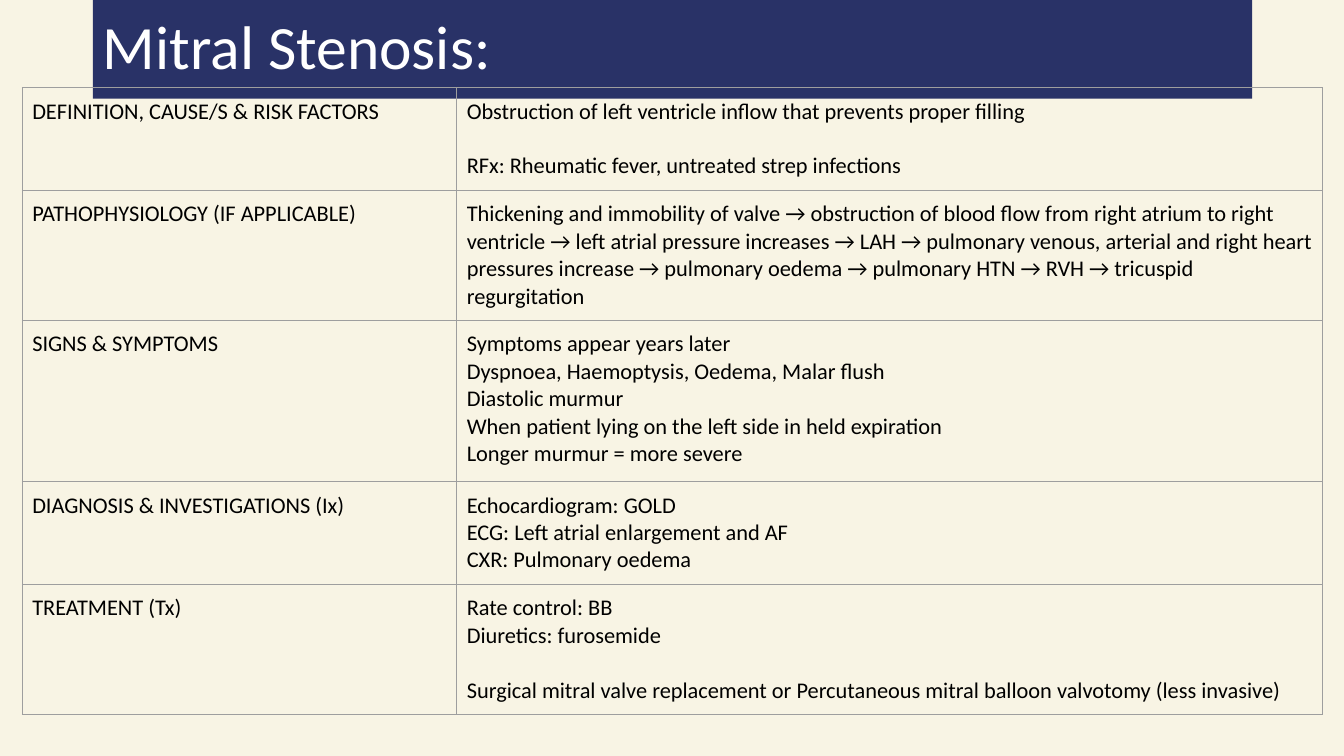
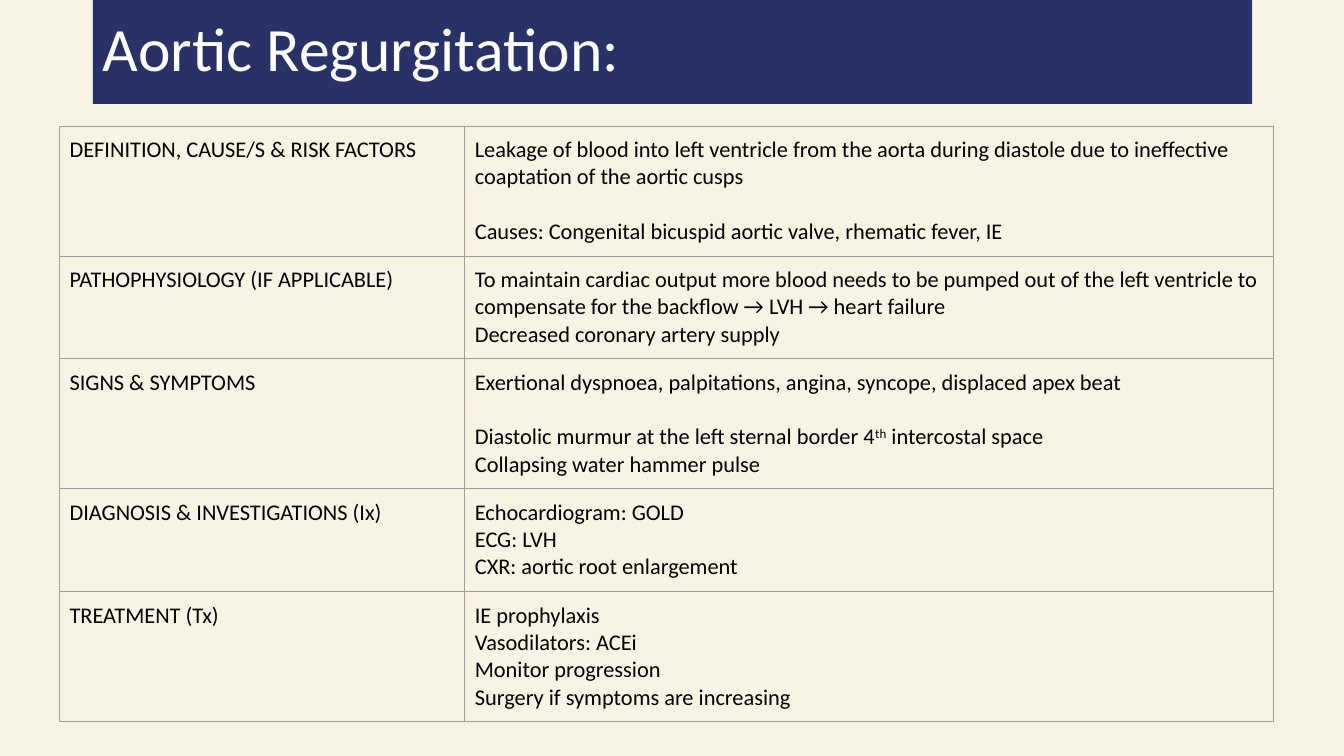
from lxml.etree import SubElement
from pptx import Presentation
from pptx.dml.color import RGBColor
from pptx.enum.text import MSO_ANCHOR, MSO_AUTO_SIZE, PP_ALIGN
from pptx.oxml.ns import qn
from pptx.util import Inches, Pt

CREAM = RGBColor(0xF8, 0xF4, 0xE4)
NAVY = RGBColor(0x29, 0x32, 0x67)
WHITE = RGBColor(0xFF, 0xFF, 0xFF)
BLACK = RGBColor(0, 0, 0)
GREY = RGBColor(0x9E, 0x9E, 0x9E)
FONT = "Calibri"
GAP = Pt(19.5)
PAD = Inches(0.1)
LABELS = [
    "DEFINITION, CAUSE/S & RISK FACTORS",
    "PATHOPHYSIOLOGY (IF APPLICABLE)",
    "SIGNS & SYMPTOMS",
    "DIAGNOSIS & INVESTIGATIONS (Ix)",
    "TREATMENT (Tx)",
]

# Each entry holds blocks of lines; a gap separates the blocks, and ^ encloses superscript.
MITRAL = [
    [["Obstruction of left ventricle inflow that prevents proper filling"],
     ["RFx: Rheumatic fever, untreated strep infections"]],
    [["Thickening and immobility of valve → obstruction of blood flow from right "
      "atrium to right ventricle → left atrial pressure increases → LAH → pulmonary "
      "venous, arterial and right heart pressures increase → pulmonary oedema → "
      "pulmonary HTN → RVH → tricuspid regurgitation"]],
    [["Symptoms appear years later",
      "Dyspnoea, Haemoptysis, Oedema, Malar flush",
      "Diastolic murmur",
      "When patient lying on the left side in held expiration",
      "Longer murmur = more severe"]],
    [["Echocardiogram: GOLD",
      "ECG: Left atrial enlargement and AF",
      "CXR: Pulmonary oedema"]],
    [["Rate control: BB", "Diuretics: furosemide"],
     ["Surgical mitral valve replacement or Percutaneous mitral balloon valvotomy "
      "(less invasive)"]],
]
AORTIC = [
    [["Leakage of blood into left ventricle from the aorta during diastole due to "
      "ineffective coaptation of the aortic cusps"],
     ["Causes: Congenital bicuspid aortic valve, rhematic fever, IE"]],
    [["To maintain cardiac output more blood needs to be pumped out of the left "
      "ventricle to compensate for the backflow → LVH → heart failure",
      "Decreased coronary artery supply"]],
    [["Exertional dyspnoea, palpitations, angina, syncope, displaced apex beat"],
     ["Diastolic murmur at the left sternal border 4^th^ intercostal space",
      "Collapsing water hammer pulse"]],
    [["Echocardiogram: GOLD", "ECG: LVH", "CXR: aortic root enlargement"]],
    [["IE prophylaxis",
      "Vasodilators: ACEi",
      "Monitor progression",
      "Surgery if symptoms are increasing"]],
]


def style(run, size, color):
    run.font.name = FONT
    run.font.size = Pt(size)
    run.font.color.rgb = color


def add_title(slide, text, height):
    title = slide.shapes.title
    title.left, title.top = Inches(0.92), Inches(0)
    title.width, title.height = Inches(11.5), Inches(height)
    title.fill.solid()
    title.fill.fore_color.rgb = NAVY
    frame = title.text_frame
    frame.text = text
    frame.auto_size = MSO_AUTO_SIZE.NONE
    frame.vertical_anchor = MSO_ANCHOR.MIDDLE
    para = frame.paragraphs[0]
    para.alignment = PP_ALIGN.LEFT
    para.line_spacing = 0.9
    style(para.runs[0], 44, WHITE)


def add_border(cell):
    props = cell._tc.get_or_add_tcPr()
    for side in ("a:lnL", "a:lnR", "a:lnT", "a:lnB"):
        line = SubElement(props, qn(side), w=str(Pt(0.75)))
        fill = SubElement(line, qn("a:solidFill"))
        SubElement(fill, qn("a:srgbClr"), val=str(GREY))


def fill_cell(cell, blocks):
    cell.margin_left = cell.margin_right = PAD
    cell.margin_top = cell.margin_bottom = PAD
    cell.vertical_anchor = MSO_ANCHOR.TOP
    add_border(cell)
    cell.fill.background()
    frame = cell.text_frame
    frame.text = "\n".join(line for block in blocks for line in block)
    paras = iter(frame.paragraphs)
    for index, block in enumerate(blocks):
        for place, line in enumerate(block):
            para = next(paras)
            if index and not place:
                para.space_before = GAP
            parts = line.split("^")
            para.text = parts[0]
            for part in parts[1:]:
                para.add_run().text = part
            for order, run in enumerate(para.runs):
                style(run, 16, BLACK)
                if order % 2:
                    run.font._element.set("baseline", "30000")


def add_grid(slide, box, split, heights, notes):
    left, top, width = box
    shape = slide.shapes.add_table(
        len(LABELS), 2, Inches(left), Inches(top),
        Inches(width), Inches(sum(heights)))
    table = shape.table
    table.first_row = table.horz_banding = False
    table.columns[0].width = Inches(split)
    table.columns[1].width = Inches(width - split)
    for row, height, label, blocks in zip(table.rows, heights, LABELS, notes):
        row.height = Inches(height)
        fill_cell(row.cells[0], [[label]])
        fill_cell(row.cells[1], blocks)


def add_topic(deck, title, band, box, split, heights, notes):
    slide = deck.slides.add_slide(deck.slide_layouts[5])
    add_title(slide, title, band)
    add_grid(slide, box, split, heights, notes)


def main():
    deck = Presentation()
    deck.slide_width, deck.slide_height = Inches(13.33), Inches(7.5)
    back = deck.slide_master.background.fill
    back.solid()
    back.fore_color.rgb = CREAM
    add_topic(deck, "Mitral Stenosis:", 0.98, (0.22, 0.87, 12.9), 4.31,
              [1.02, 1.29, 1.6, 1.02, 1.29], MITRAL)
    add_topic(deck, "Aortic Regurgitation:", 1.03, (0.59, 1.25, 12.04), 4.02,
              [1.29, 1.02, 1.29, 1.02, 1.29], AORTIC)
    deck.save("out.pptx")


if __name__ == "__main__":
    main()
